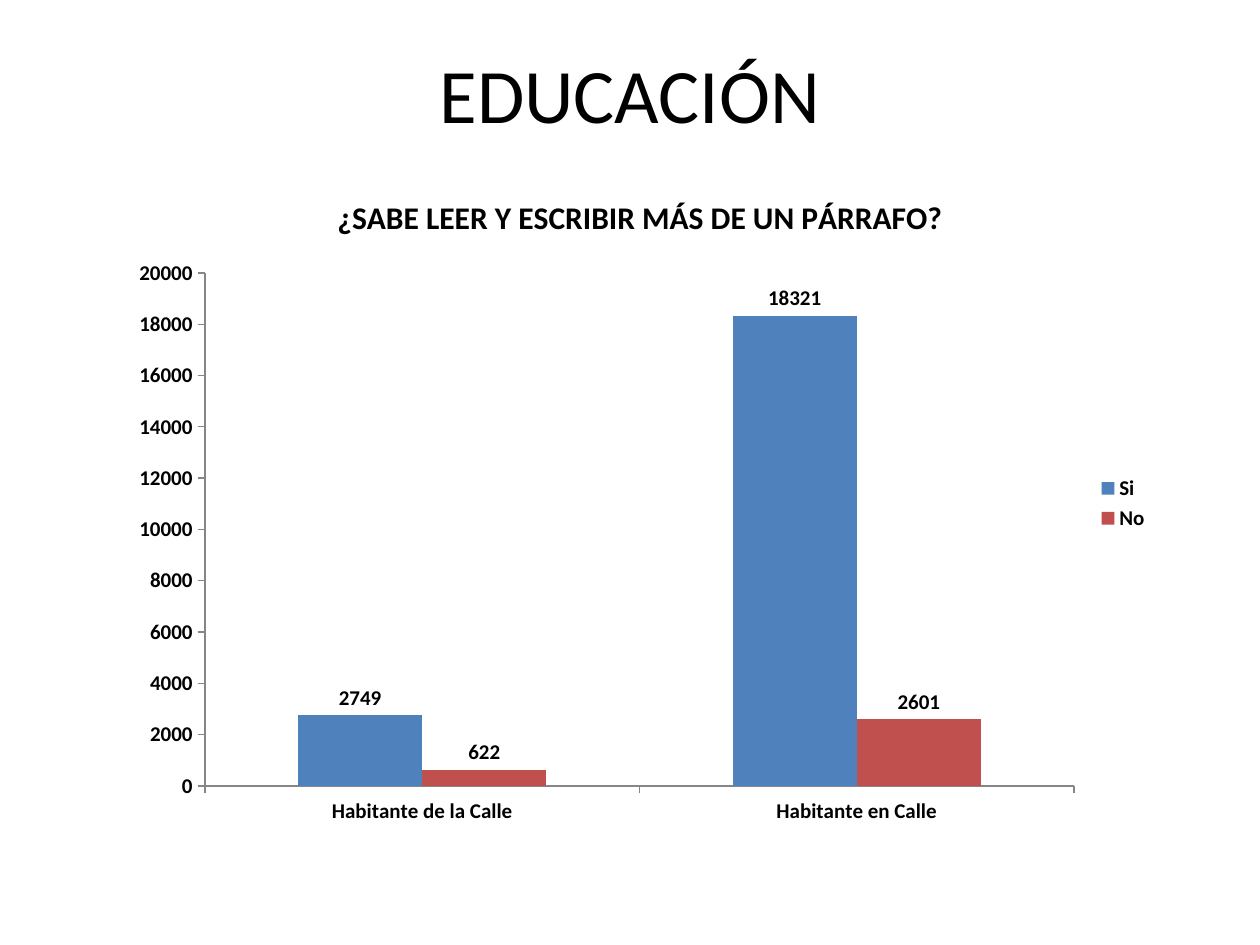
from pptx import Presentation
from pptx.chart.data import CategoryChartData
from pptx.dml.color import RGBColor
from pptx.enum.chart import XL_CHART_TYPE, XL_LABEL_POSITION, XL_LEGEND_POSITION, XL_TICK_MARK
from pptx.enum.text import MSO_ANCHOR, PP_ALIGN
from pptx.util import Pt

FONT = "Calibri"
BLACK = "000000"
AXIS_GRAY = "868686"
CATEGORIES = ["Habitante de la Calle", "Habitante en Calle"]
SERIES = [
    ("Si", [2749, 18321], "4F81BD"),
    ("No", [622, 2601], "C0504D"),
]


def color(hex_string):
    return RGBColor.from_string(hex_string)


def format_font(font, size, bold):
    font.name = FONT
    font.size = Pt(size)
    font.bold = bold
    font.color.rgb = color(BLACK)


def set_title(slide, text):
    sp = slide.shapes.title
    sp.left, sp.top, sp.width, sp.height = Pt(36), Pt(21.6), Pt(648), Pt(62.6)
    tf = sp.text_frame
    tf.word_wrap = True
    tf.vertical_anchor = MSO_ANCHOR.MIDDLE
    p = tf.paragraphs[0]
    p.alignment = PP_ALIGN.CENTER
    r = p.add_run()
    r.text = text
    format_font(r.font, 44, False)


def format_axis(axis):
    axis.has_major_gridlines = False
    axis.major_tick_mark = XL_TICK_MARK.OUTSIDE
    axis.minor_tick_mark = XL_TICK_MARK.NONE
    axis.format.line.color.rgb = color(AXIS_GRAY)
    axis.format.line.width = Pt(0.75)
    format_font(axis.tick_labels.font, 12, True)


def format_series(series, fill):
    series.format.fill.solid()
    series.format.fill.fore_color.rgb = color(fill)
    series.invert_if_negative = False
    labels = series.data_labels
    labels.show_value = True
    labels.position = XL_LABEL_POSITION.OUTSIDE_END
    format_font(labels.font, 12, True)


def add_column_chart(slide, title):
    data = CategoryChartData(number_format="General")
    data.categories = CATEGORIES
    for name, values, _ in SERIES:
        data.add_series(name, values)
    chart = slide.shapes.add_chart(
        XL_CHART_TYPE.COLUMN_CLUSTERED, Pt(67.7), Pt(97.2), Pt(596.2), Pt(380.9), data
    ).chart
    format_font(chart.font, 12, True)

    chart.has_title = True
    r = chart.chart_title.text_frame.paragraphs[0].add_run()
    r.text = title
    format_font(r.font, 18, True)
    chart.chart_title.include_in_layout = False

    chart.has_legend = True
    chart.legend.position = XL_LEGEND_POSITION.RIGHT
    chart.legend.include_in_layout = False
    format_font(chart.legend.font, 12, True)

    for axis in (chart.category_axis, chart.value_axis):
        format_axis(axis)
    chart.value_axis.minimum_scale = 0
    chart.value_axis.maximum_scale = 20000
    chart.value_axis.major_unit = 2000

    plot = chart.plots[0]
    plot.gap_width = 150
    plot.overlap = 0
    plot.vary_by_categories = False
    for series, (_, _, fill) in zip(plot.series, SERIES):
        format_series(series, fill)


def main():
    prs = Presentation()
    prs.slide_width, prs.slide_height = Pt(720), Pt(540)
    s = prs.slides.add_slide(prs.slide_layouts[5])
    set_title(s, "EDUCACIÓN")
    add_column_chart(s, "¿SABE LEER Y ESCRIBIR MÁS DE UN PÁRRAFO?")
    prs.save("out.pptx")


if __name__ == "__main__":
    main()
